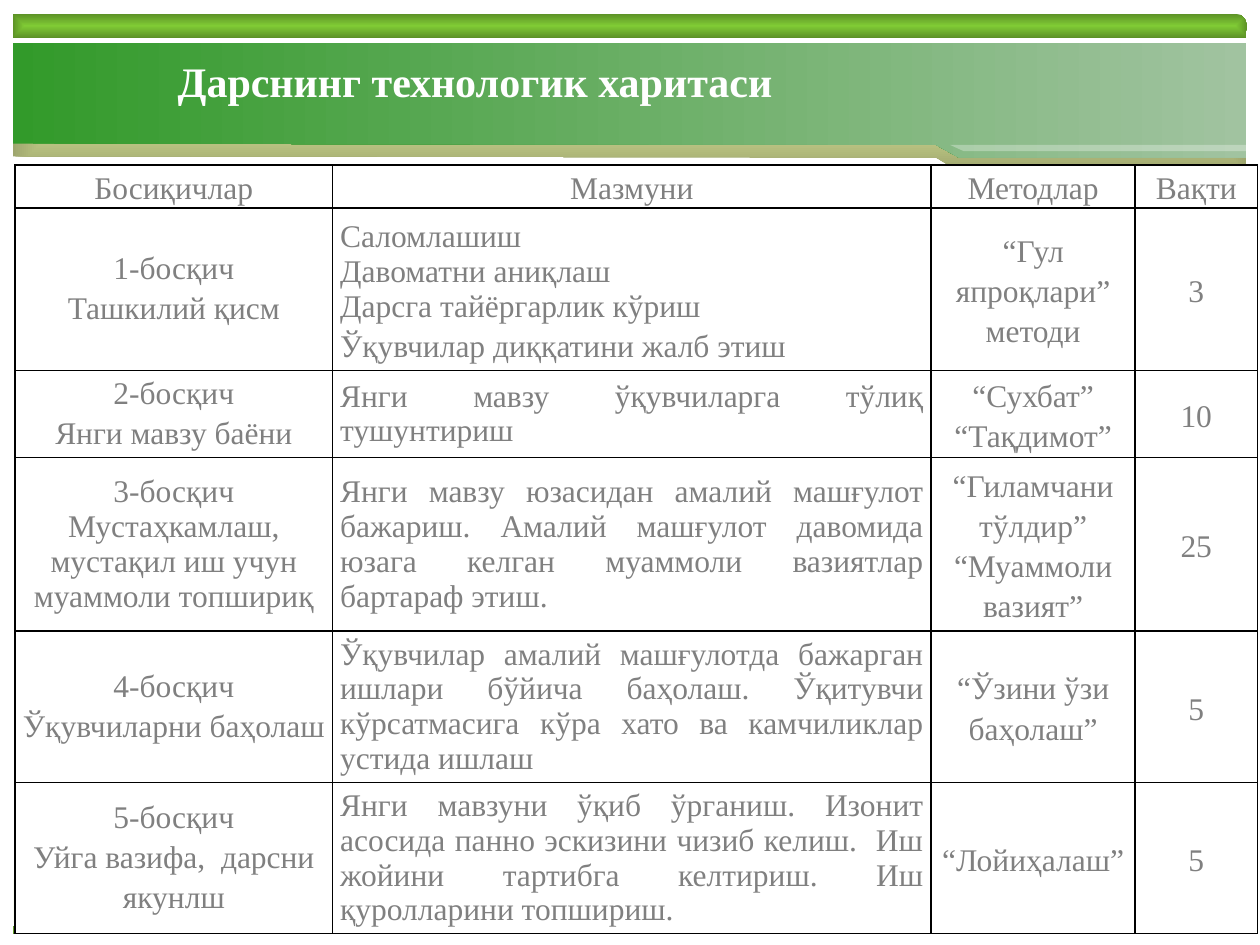
from dataclasses import dataclass
from typing import NamedTuple, Optional

from lxml.etree import SubElement
from pptx import Presentation
from pptx.dml.color import RGBColor
from pptx.enum.text import MSO_ANCHOR, MSO_AUTO_SIZE, PP_ALIGN
from pptx.oxml.ns import qn
from pptx.util import Inches, Pt


@dataclass(frozen=True)
class Theme:
    font: str = "Times New Roman"
    title_size: int = 24
    table_size: int = 18
    border_width: int = 1
    white: str = "FFFFFF"
    text: str = "808080"
    border: str = "000000"
    cream: str = "DDE89A"
    olive: str = "9EA66E"
    green: str = "329A2A"
    dark_green: str = "246E1E"
    pale_green: str = "A1C3A0"
    lime: str = "80CB35"
    dark_lime: str = "5C9126"


THEME = Theme()


class Band(NamedTuple):
    points: list[tuple[float, float]]
    colour: str
    end_colour: Optional[str] = None  # a second colour makes a gradient
    linear: bool = False
    opacity: int = 100


class Line(NamedTuple):
    text: str
    spacing: float = 1.15


class Row(NamedTuple):
    height: float
    stage: list[Line]
    content: list[Line]
    methods: list[Line]
    minutes: str


def tight(text: str) -> Line:
    return Line(text, 1.0)


def header_band(drop: float, bevel: float) -> list[tuple[float, float]]:
    """Outline of the title band, whose lower edge steps down at the right."""
    return [(9.89, 0.34), (0.1, 0.34), (0.1, drop), (7.43, drop + 0.01),
            (7.61, bevel), (9.89, bevel)]


BANDS = [
    # Footer
    Band([(0.11, 7.32), (9.92, 7.32), (9.91, 7.14), (2.69, 7.14), (2.44, 6.98), (0.11, 6.98)],
         THEME.cream),
    Band([(0.11, 7.36), (9.93, 7.35), (9.92, 7.22), (2.68, 7.22), (2.4, 7.06), (0.11, 7.06)],
         THEME.green, THEME.dark_green),
    # Top bar with a rounded corner
    Band([(0.1, 0.11), (9.8, 0.11), (9.85, 0.12), (9.88, 0.15), (9.9, 0.19), (9.89, 0.3),
          (0.1, 0.3)], THEME.lime, THEME.dark_lime),
    # Title band over its shade
    Band(header_band(1.24, 1.36), THEME.cream, THEME.olive),
    Band(header_band(1.14, 1.25), THEME.green, THEME.pale_green, linear=True),
    # Bottom bar and highlight
    Band([(0.1, 7.35), (9.92, 7.35), (9.92, 7.41), (0.1, 7.41)], THEME.lime, THEME.dark_lime),
    Band([(7.54, 1.15), (9.9, 1.15), (9.9, 1.2), (7.65, 1.2)], THEME.white, opacity=30),
]

COLUMN_WIDTHS = [2.52, 4.75, 1.62, 0.97]
ROWS = [
    Row(0.34, [Line("Босиқичлар")], [Line("Мазмуни")], [Line("Методлар")], "Вақти"),
    Row(1.29, [tight("1-босқич"), Line("Ташкилий қисм")],
        [Line("Саломлашиш"), tight("Давоматни аниқлаш"), tight("Дарсга тайёргарлик кўриш"),
         Line("Ўқувчилар диққатини жалб этиш")],
        [Line("“Гул япроқлари” методи")], "3"),
    Row(0.69, [tight("2-босқич"), Line("Янги мавзу баёни")],
        [tight("Янги мавзу ўқувчиларга тўлиқ тушунтириш")],
        [Line("“Сухбат”"), Line("“Тақдимот”")], "10"),
    Row(1.38, [tight("3-босқич Мустаҳкамлаш, мустақил иш учун муаммоли топшириқ")],
        [tight("Янги мавзу юзасидан амалий машғулот бажариш. Амалий машғулот давомида "
               "юзага келган муаммоли вазиятлар бартараф этиш.")],
        [Line("“Гиламчани тўлдир” “Муаммоли вазият”")], "25"),
    Row(1.2, [tight("4-босқич"), Line("Ўқувчиларни баҳолаш")],
        [tight("Ўқувчилар амалий машғулотда бажарган ишлари бўйича баҳолаш. Ўқитувчи "
               "кўрсатмасига кўра хато ва камчиликлар устида ишлаш")],
        [Line("“Ўзини ўзи баҳолаш”")], "5"),
    Row(1.2, [tight("5-босқич"), Line("Уйга вазифа,  дарсни якунлш")],
        [tight("Янги мавзуни ўқиб ўрганиш. Изонит асосида панно эскизини чизиб келиш.  Иш "
               "жойини тартибга келтириш. Иш қуролларини топшириш.")],
        [Line("“Лойиҳалаш”")], "5"),
]


def add_run(paragraph, text: str, size: int, colour: str, bold: bool = False) -> None:
    run = paragraph.add_run()
    run.text = text
    run.font.name = THEME.font
    run.font.size = Pt(size)
    run.font.bold = bold
    run.font.color.rgb = RGBColor.from_string(colour)


def set_gradient(shape, band: Band) -> None:
    shape.fill.gradient()
    for stop, colour in zip(shape.fill.gradient_stops, (band.colour, band.end_colour)):
        stop.color.rgb = RGBColor.from_string(colour)
    shape.fill.gradient_stops[0].position = 0
    shape.fill.gradient_stops[1].position = 1
    if band.linear:
        shape.fill.gradient_angle = 0
        return
    gradient = shape._element.spPr.find(qn("a:gradFill"))
    gradient.remove(gradient.find(qn("a:lin")))
    centre = SubElement(gradient, qn("a:path"), path="rect")
    SubElement(centre, qn("a:fillToRect"), l="50000", t="50000", r="50000", b="50000")


def add_band(slide, band: Band) -> None:
    points = [(Inches(x), Inches(y)) for x, y in band.points]
    builder = slide.shapes.build_freeform(*points[0])
    builder.add_line_segments(points[1:], close=True)
    shape = builder.convert_to_shape()
    shape.shadow.inherit = False
    shape.line.fill.background()
    if band.end_colour:
        set_gradient(shape, band)
        return
    shape.fill.solid()
    shape.fill.fore_color.rgb = RGBColor.from_string(band.colour)
    if band.opacity < 100:
        colour = shape._element.spPr.find(qn("a:solidFill"))[0]
        SubElement(colour, qn("a:alpha"), val=str(band.opacity * 1000))


def fill_cell(cell, lines: list[Line], alignment: PP_ALIGN) -> None:
    cell.margin_left = cell.margin_right = Inches(0.06)
    cell.margin_top = cell.margin_bottom = 0
    cell.vertical_anchor = MSO_ANCHOR.MIDDLE
    properties = cell._tc.get_or_add_tcPr()
    for side in ("lnL", "lnR", "lnT", "lnB"):
        border = SubElement(properties, qn(f"a:{side}"), w=str(Pt(THEME.border_width)))
        SubElement(SubElement(border, qn("a:solidFill")), qn("a:srgbClr"), val=THEME.border)
    cell.fill.solid()
    cell.fill.fore_color.rgb = RGBColor.from_string(THEME.white)
    frame = cell.text_frame
    for index, line in enumerate(lines):
        paragraph = frame.add_paragraph() if index else frame.paragraphs[0]
        paragraph.alignment = alignment
        paragraph.line_spacing = line.spacing
        add_run(paragraph, line.text, THEME.table_size, THEME.text)


def add_lesson_table(slide) -> None:
    table = slide.shapes.add_table(
        len(ROWS), len(COLUMN_WIDTHS), Inches(0.12), Inches(1.31),
        Inches(sum(COLUMN_WIDTHS)), Inches(sum(row.height for row in ROWS))).table
    for column, width in zip(table.columns, COLUMN_WIDTHS):
        column.width = Inches(width)
    for row_index, row in enumerate(ROWS):
        table.rows[row_index].height = Inches(row.height)
        cells = (row.stage, row.content, row.methods, [Line(row.minutes)])
        for column_index, lines in enumerate(cells):
            justified = row_index > 0 and column_index == 1
            fill_cell(table.cell(row_index, column_index), lines,
                      PP_ALIGN.JUSTIFY if justified else PP_ALIGN.CENTER)


def format_title(slide) -> None:
    title = slide.shapes.title
    title.left, title.top = Inches(1.06), Inches(0.37)
    title.width, title.height = Inches(5.22), Inches(0.81)
    frame = title.text_frame
    frame.auto_size = MSO_AUTO_SIZE.NONE
    frame.word_wrap = True
    frame.vertical_anchor = MSO_ANCHOR.TOP
    frame.margin_top = Inches(0.07)
    frame.margin_right = 0
    paragraph = frame.paragraphs[0]
    paragraph.alignment = PP_ALIGN.LEFT
    paragraph._p.get_or_add_pPr().set("indent", str(Inches(0.25)))
    add_run(paragraph, "Дарснинг технологик харитаси", THEME.title_size, THEME.white, bold=True)
    # Bring the title in front of the band
    title._element.getparent().append(title._element)


def main() -> None:
    presentation = Presentation()
    presentation.slide_width, presentation.slide_height = Inches(10), Inches(7.5)
    slide = presentation.slides.add_slide(presentation.slide_layouts[5])
    for band in BANDS:
        add_band(slide, band)
    add_lesson_table(slide)
    format_title(slide)
    presentation.save("out.pptx")


if __name__ == "__main__":
    main()
